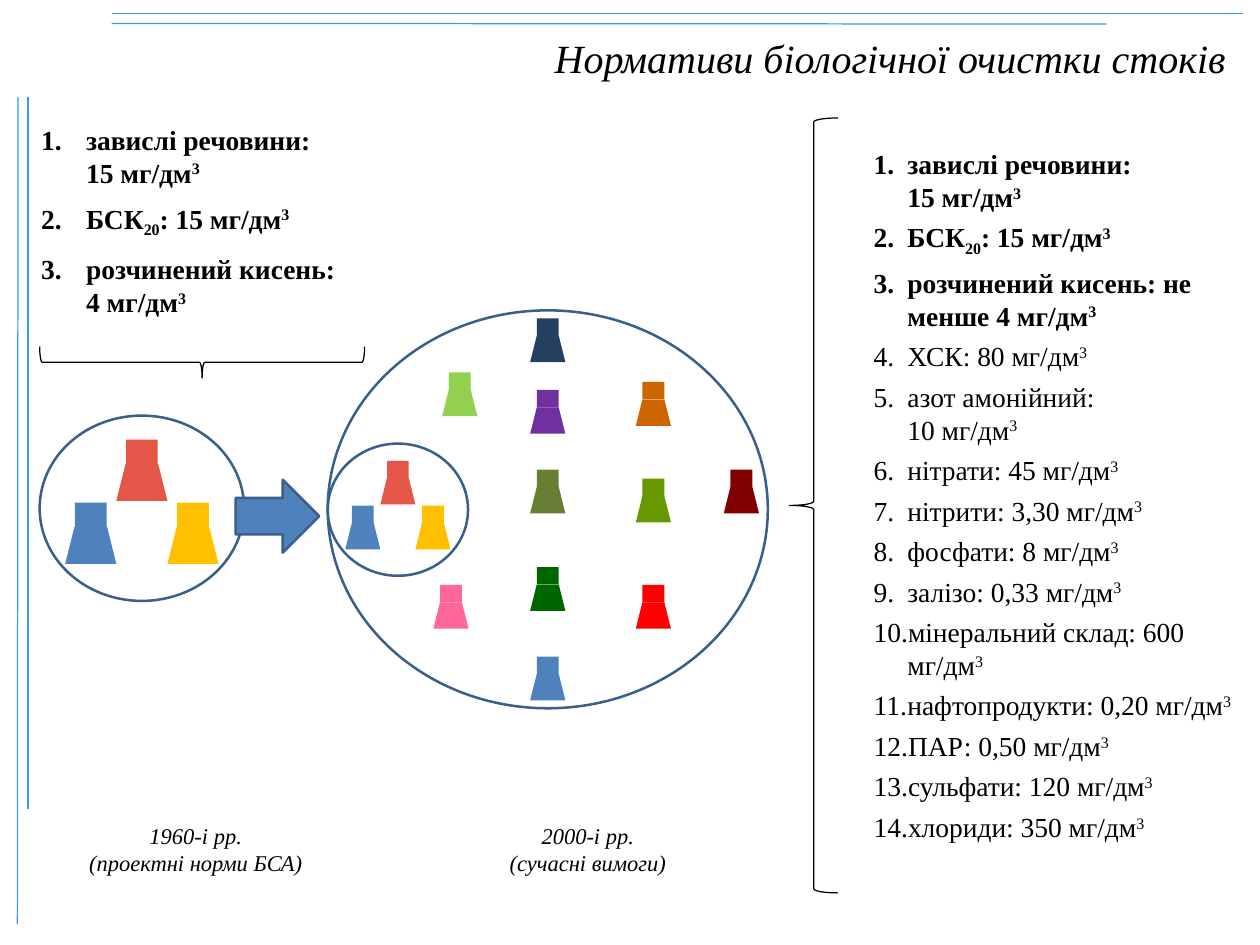
from dataclasses import dataclass

from lxml import etree
from pptx import Presentation
from pptx import util as u
from pptx.dml.color import RGBColor
from pptx.enum import shapes, text
from pptx.oxml import ns


@dataclass(frozen=True)
class Theme:
    font: str = "Times New Roman"
    ink: str = "000000"
    rule: str = "3399FF"
    outline: str = "3A5F8C"
    blue: str = "4F81BD"
    yellow: str = "FFC000"
    coral: str = "E45748"
    title: float = 32
    body: float = 22
    caption: float = 18
    thin: float = 1
    thick: float = 2


THEME = Theme()
SHAPE = shapes.MSO_SHAPE
ALIGN = text.PP_ALIGN
BASELINES = {"^": "30000", "_": "-25000"}

# Column, row (shares of the enclosing ellipse) and colour of each flask
CORE_FLASKS = [
    (0.375, 0.13, THEME.coral),
    (0.125, 0.47, THEME.blue),
    (0.625, 0.47, THEME.yellow),
]
ADDED_FLASKS = [
    (0.46, 0.02, "254061"), (0.46, 0.2, "7030A0"), (0.46, 0.4, "677F34"),
    (0.46, 0.645, "006600"), (0.46, 0.87, THEME.blue), (0.26, 0.156, "92D050"),
    (0.7, 0.18, "CC6600"), (0.7, 0.423, "669900"), (0.7, 0.69, "FF0000"),
    (0.24, 0.69, "FF6699"), (0.9, 0.4, "800000"),
]
# "|^" opens a superscript and "|_" a subscript; "|" closes it
UNIT = " мг/дм|^3"
OLD_NORMS = [
    "завислі речовини:\n15" + UNIT,
    "БСК|_20|: 15" + UNIT,
    "розчинений кисень:\n4" + UNIT,
]
NEW_NORMS = OLD_NORMS[:2] + ["розчинений кисень: не менше 4" + UNIT] + [
    norm + UNIT for norm in (
        "ХСК: 80", "азот амонійний:\n10", "нітрати: 45", "нітрити: 3,30",
        "фосфати: 8", "залізо: 0,33", "мінеральний склад: 600",
        "нафтопродукти: 0,20", "ПАР: 0,50", "сульфати: 120", "хлориди: 350",
    )
]


def cm(*lengths):
    return [u.Cm(length) for length in lengths]


def add_shape(slide, kind, box, fill=None, line=None, width=THEME.thick):
    shape = slide.shapes.add_shape(kind, *cm(*box))
    shape.shadow.inherit = False
    if fill:
        shape.fill.solid()
        shape.fill.fore_color.rgb = RGBColor.from_string(fill)
    else:
        shape.fill.background()
    if line:
        shape.line.color.rgb = RGBColor.from_string(line)
        shape.line.width = u.Pt(width)
    else:
        shape.line.fill.background()
    return shape


def add_rule(slide, start, end):
    rule = slide.shapes.add_connector(
        shapes.MSO_CONNECTOR.STRAIGHT, *cm(*start, *end))
    rule.line.color.rgb = RGBColor.from_string(THEME.rule)
    rule.line.width = u.Pt(THEME.thin)
    etree.SubElement(rule._element.spPr, ns.qn("a:effectLst"))


def number_paragraph(paragraph, indent):
    props = paragraph._p.get_or_add_pPr()
    props.set("marL", str(u.Cm(indent)))
    props.set("indent", str(-u.Cm(indent)))
    etree.SubElement(props, ns.qn("a:buFont"), typeface=THEME.font)
    etree.SubElement(props, ns.qn("a:buAutoNum"), type="arabicPeriod")


def write_runs(paragraph, content, size, bold, italic):
    for piece in content.split("|"):
        baseline = BASELINES.get(piece[:1])
        for i, words in enumerate(piece[1 if baseline else 0:].split("\n")):
            if i:
                paragraph.add_line_break()
            run = paragraph.add_run()
            run.text = words
            font = run.font
            font.name, font.size = THEME.font, u.Pt(size)
            font.bold, font.italic = bold, italic
            font.color.rgb = RGBColor.from_string(THEME.ink)
            if baseline:
                run._r.get_or_add_rPr().set("baseline", baseline)


def add_text(slide, box, paragraphs, size, bold_count=0, italic=False,
             align=ALIGN.LEFT, anchor=text.MSO_ANCHOR.TOP, inset=(0.25, 0.13),
             indent=None, before=0, after=0):
    """Place paragraphs; the first bold_count are bold, an indent numbers them."""
    frame = slide.shapes.add_textbox(*cm(*box)).text_frame
    frame.word_wrap = True
    frame.vertical_anchor = anchor
    frame.margin_left = frame.margin_right = u.Cm(inset[0])
    frame.margin_top = frame.margin_bottom = u.Cm(inset[1])
    for i, content in enumerate(paragraphs):
        paragraph = frame.add_paragraph() if i else frame.paragraphs[0]
        paragraph.alignment = align
        paragraph.space_before = u.Pt(before)
        paragraph.space_after = u.Pt(after)
        if indent:
            number_paragraph(paragraph, indent)
        write_runs(paragraph, content, size, i < bold_count, italic)


def add_flask(slide, box, color):
    left, top, width, height = box
    neck = 0.4 * height
    add_shape(slide, SHAPE.TRAPEZOID,
              (left, top + neck, width, height - neck), fill=color)
    add_shape(slide, SHAPE.RECTANGLE,
              (left + 0.19 * width, top, 0.62 * width, neck), fill=color)


def add_flask_circle(slide, box, flasks, flask_width, flask_height):
    """Draw an ellipse with flasks whose sizes are shares of its box."""
    left, top, width, height = box
    for column, row, color in flasks:
        add_flask(slide, (left + column * width, top + row * height,
                          flask_width * width, flask_height * height), color)
    add_shape(slide, SHAPE.OVAL, box, line=THEME.outline)


def add_frame_rules(slide, box):
    left, top, width, height = box
    add_rule(slide, (left + 2.66, top), (left + width, top))
    add_rule(slide, (left + 2.66, top + 0.28), (left + 30.73, top + 0.3))
    add_rule(slide, (left + 0.02, top + 2.36), (left, top + height))
    add_rule(slide, (left + 0.3, top + 2.36), (left + 0.3, top + 22.45))


def add_title(slide, box):
    add_text(slide, box, ["Нормативи біологічної очистки стоків"],
             THEME.title, italic=True, align=ALIGN.RIGHT,
             anchor=text.MSO_ANCHOR.MIDDLE, inset=(0.36, 0.18))


def add_old_era(slide, box):
    left, top, width, height = box
    add_flask_circle(slide, (left + 0.61, top + 8.4, 5.77, 5.23),
                     CORE_FLASKS, 0.25, 0.33)
    add_text(slide, (left + 0.4, top, 12.7, 6.2), OLD_NORMS, THEME.body,
             bold_count=3, indent=1.27, before=4.4, after=6)
    brace = add_shape(slide, SHAPE.LEFT_BRACE,
                      (left + 4.75, top + 2.31, 0.89, 9.17),
                      line=THEME.ink, width=THEME.thin)
    brace.rotation = 270
    add_text(slide, (left, top + height - 1.8, width, 1.8),
             ["1960-і рр.", "(проектні норми БСА)"],
             THEME.caption, italic=True, align=ALIGN.CENTER)


def add_new_era(slide, box):
    left, top, width, height = box
    add_flask_circle(slide, (left, top, 12.42, 11.23),
                     ADDED_FLASKS, 0.08, 0.11)
    add_flask_circle(slide, (left, top + 3.76, 3.96, 3.73),
                     CORE_FLASKS, 0.25, 0.33)
    add_text(slide, (left + 0.99, top + height - 1.8, width - 0.99, 1.8),
             ["2000-і рр.\n(сучасні вимоги)"],
             THEME.caption, italic=True, align=ALIGN.CENTER)


def add_new_norms(slide, box):
    left, top, width, height = box
    add_text(slide, (left + 2.13, top + 0.69, width - 2.13, height - 0.53),
             NEW_NORMS, THEME.body, bold_count=3, indent=0.95, after=6)
    add_shape(slide, SHAPE.LEFT_BRACE, (left, top, 1.37, height),
              line=THEME.ink, width=THEME.thin)


def main():
    deck = Presentation()
    deck.slide_width, deck.slide_height = cm(35.56, 26.67)
    slide = deck.slides.add_slide(deck.slide_layouts[6])
    add_title(slide, (2.18, 0.58, 32.79, 2.06))
    add_frame_rules(slide, (0.49, 0.38, 34.59, 25.7))
    add_old_era(slide, (0.51, 3.33, 10.03, 21.53))
    add_new_era(slide, (9.25, 8.76, 13.69, 16.1))
    add_new_norms(slide, (22.28, 3.33, 12.77, 21.87))
    add_shape(slide, SHAPE.RIGHT_ARROW, (6.65, 13.54, 2.36, 2.06),
              fill=THEME.blue, line=THEME.outline)
    deck.save("out.pptx")


if __name__ == "__main__":
    main()
